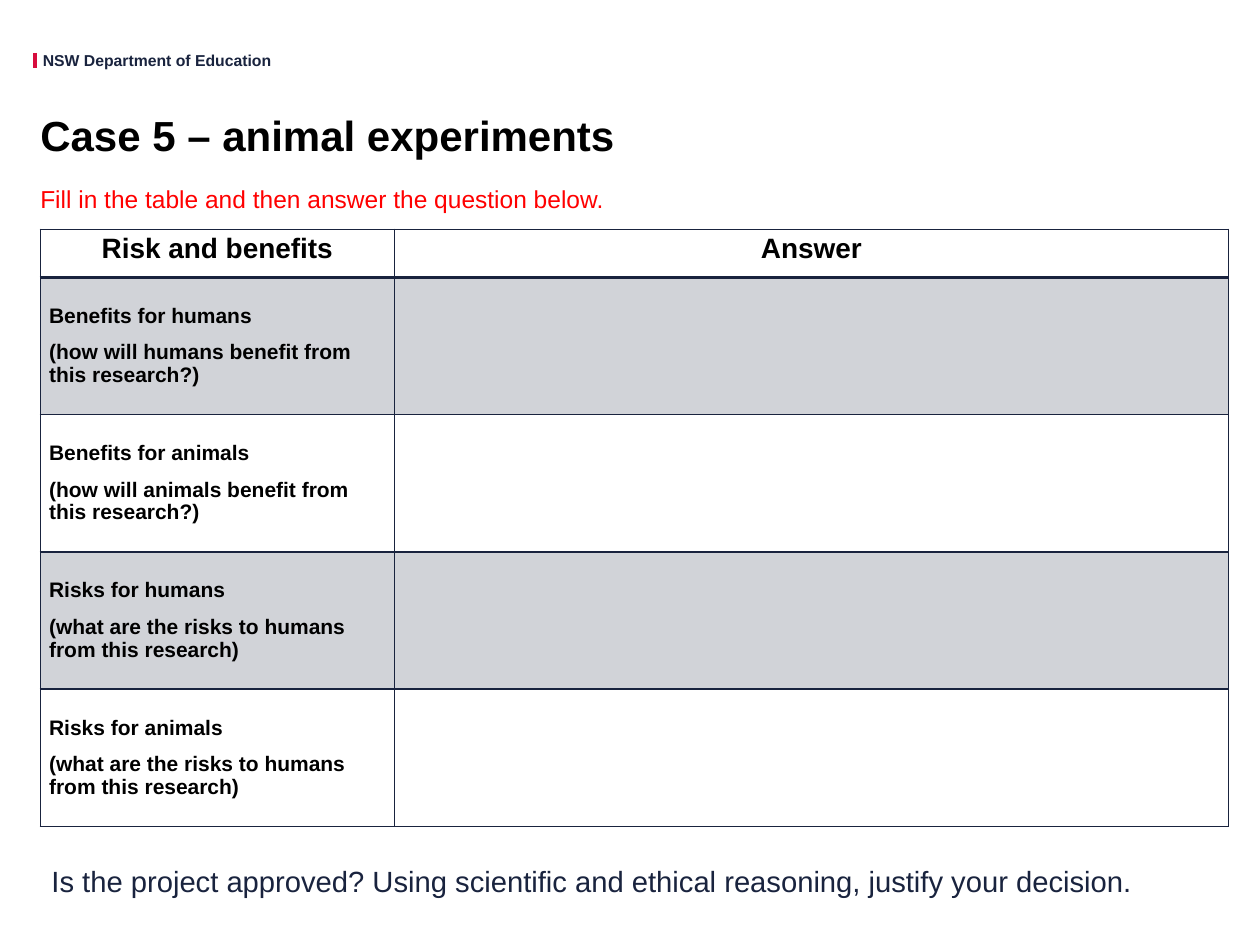
from lxml.etree import SubElement
from pptx import Presentation
from pptx.dml.color import RGBColor
from pptx.enum.shapes import MSO_CONNECTOR
from pptx.enum.text import MSO_ANCHOR, PP_ALIGN
from pptx.oxml.ns import qn
from pptx.util import Inches, Pt

COLOURS = {"navy": "19233E", "accent": "D70C3D", "prompt": "FF0000", "black": "000000"}
FONT = "Arial"

QUESTIONS = [
    ("Benefits for humans", "(how will humans benefit from this research?)"),
    ("Benefits for animals", "(how will animals benefit from this research?)"),
    ("Risks for humans", "(what are the risks to humans from this research)"),
    ("Risks for animals", "(what are the risks to humans from this research)"),
]


def colour(name):
    return RGBColor.from_string(COLOURS[name])


def style_runs(paragraph, size, colour_name, bold=False):
    for run in paragraph.runs:
        run.font.name = FONT
        run.font.size = Pt(size)
        run.font.bold = bold
        run.font.color.rgb = colour(colour_name)


def add_text(slide, box, text, size, colour_name, bold=False, anchor=MSO_ANCHOR.TOP,
             margins=(0, 0, 0, 0), spacing=1.0, after=0, wrap=True):
    frame = slide.shapes.add_textbox(*map(Inches, box)).text_frame
    frame.word_wrap = wrap
    frame.vertical_anchor = anchor
    (frame.margin_left, frame.margin_top,
     frame.margin_right, frame.margin_bottom) = map(Inches, margins)
    frame.text = text
    paragraph = frame.paragraphs[0]
    paragraph.line_spacing = spacing
    paragraph.space_after = Pt(after)
    style_runs(paragraph, size, colour_name, bold)


def add_header(slide, left, top):
    # Accent bar and department name
    bar = slide.shapes.add_connector(
        MSO_CONNECTOR.STRAIGHT, Inches(left), Inches(top + 0.02),
        Inches(left), Inches(top + 0.14))
    bar.line.color.rgb = colour("accent")
    bar.line.width = Pt(2.5)
    SubElement(bar._element.spPr, qn("a:effectLst"))
    add_text(slide, (left + 0.06, top, 1.83, 0.15), "NSW Department of Education",
             9, "navy", bold=True, wrap=False)


def add_heading(slide, left, top, width):
    # Title with the instruction beneath it
    add_text(slide, (left, top, width, 0.55), "Case 5 – animal experiments",
             24, "black", bold=True, anchor=MSO_ANCHOR.MIDDLE, spacing=0.9)
    add_text(slide, (left, top + 0.55, width, 0.29),
             "Fill in the table and then answer the question below.",
             14, "prompt", anchor=MSO_ANCHOR.MIDDLE, margins=(0, 0.05, 0.1, 0.05),
             spacing=1.5, after=4.5)


def set_borders(cell, top_width, bottom_width):
    properties = cell._tc.get_or_add_tcPr()
    for side, width in (("L", 1), ("R", 1), ("T", top_width), ("B", bottom_width)):
        border = SubElement(properties, qn(f"a:ln{side}"), w=str(Pt(width)))
        fill = SubElement(border, qn("a:solidFill"))
        SubElement(fill, qn("a:srgbClr"), val=COLOURS["navy"])


def fill_cell(cell, shaded):
    if not shaded:
        cell.fill.background()
        return
    cell.fill.solid()
    cell.fill.fore_color.rgb = colour("navy")
    # Direct child only: the borders hold solid fills of their own
    tint = cell._tc.tcPr.find(qn("a:solidFill")).find(qn("a:srgbClr"))
    SubElement(tint, qn("a:alpha"), val="20000")


def write_cell(cell, lines, size, alignment):
    cell.text_frame.text = "\n".join(lines)
    for index, paragraph in enumerate(cell.text_frame.paragraphs):
        paragraph.alignment = alignment
        paragraph.line_spacing = Pt(13)
        paragraph.space_before = Pt(4 if index else 0)
        paragraph.space_after = Pt(4)
        style_runs(paragraph, size, "black", bold=True)


def add_risk_table(slide, left, top, width):
    question_width, header_height, row_height = 2.81, 0.38, 1.09
    rows = [(("Risk and benefits",), ("Answer",))] + [(lines, ()) for lines in QUESTIONS]
    height = header_height + row_height * len(QUESTIONS)
    table = slide.shapes.add_table(
        len(rows), 2, *map(Inches, (left, top, width, height))).table
    table.columns[0].width = Inches(question_width)
    table.columns[1].width = Inches(width - question_width)
    for row_index, row in enumerate(rows):
        is_header = row_index == 0
        table.rows[row_index].height = Inches(header_height if is_header else row_height)
        for column_index, lines in enumerate(row):
            cell = table.cell(row_index, column_index)
            cell.vertical_anchor = MSO_ANCHOR.MIDDLE
            cell.margin_left = cell.margin_right = Inches(0.07)
            cell.margin_top = cell.margin_bottom = 0
            # A heavier rule divides the header from the first question
            set_borders(cell, 2 if row_index == 1 else 1, 2 if is_header else 1)
            fill_cell(cell, row_index % 2 == 1)
            if lines:
                write_cell(cell, lines, 16 if is_header else 12,
                           PP_ALIGN.CENTER if is_header else PP_ALIGN.LEFT)


def add_closing_question(slide, left, top, width):
    add_text(slide, (left, top, width, 0.49),
             "Is the project approved? Using scientific and ethical reasoning, "
             "justify your decision.",
             16.7, "navy", margins=(0.1, 0.05, 0.1, 0.05), spacing=1.3, after=4.5)


def main():
    presentation = Presentation()
    presentation.slide_width = Inches(10)
    presentation.slide_height = Inches(7.5)
    slide = presentation.slides.add_slide(presentation.slide_layouts[6])
    add_header(slide, 0.28, 0.4)
    add_heading(slide, 0.32, 0.82, 9.43)
    add_risk_table(slide, 0.32, 1.82, 9.43)
    add_closing_question(slide, 0.31, 6.72, 8.98)
    presentation.save("out.pptx")


if __name__ == "__main__":
    main()
